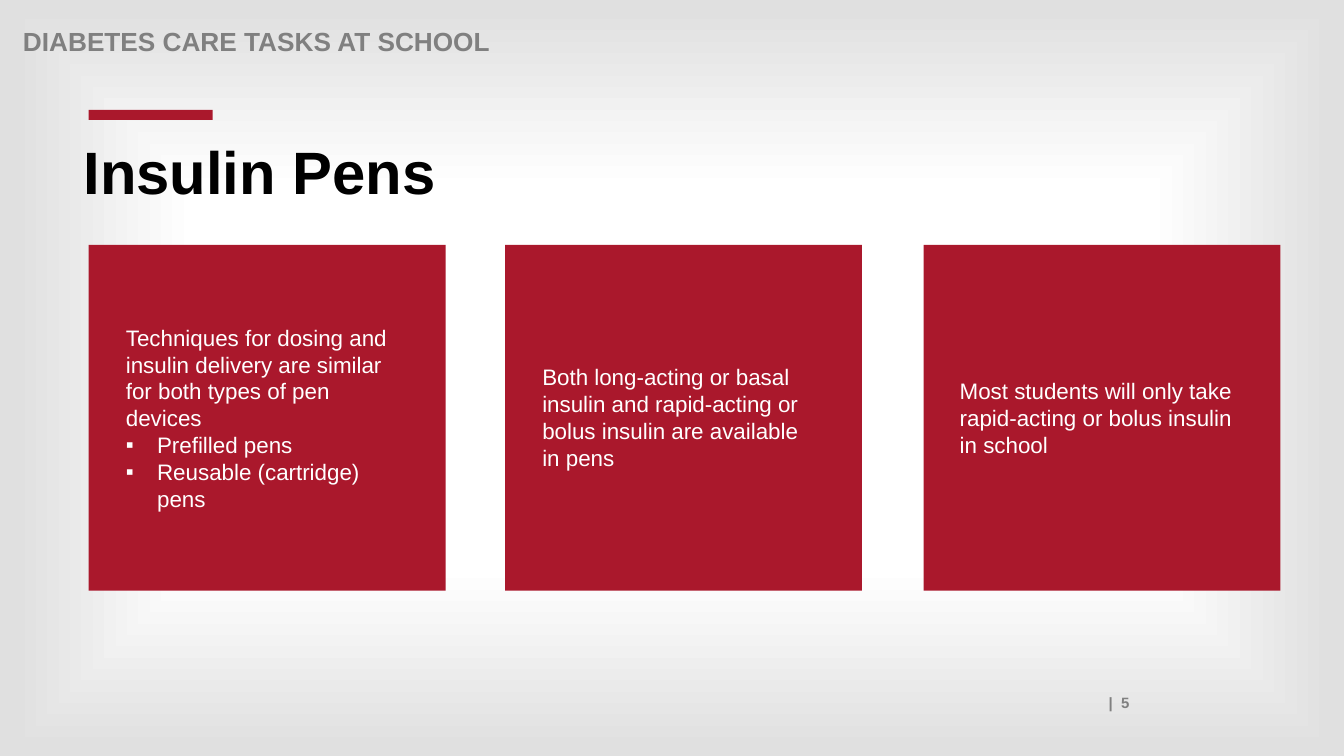
from lxml import etree
from pptx import Presentation
from pptx.dml.color import RGBColor
from pptx.enum.shapes import MSO_SHAPE as Shape
from pptx.enum.text import MSO_ANCHOR as Anchor, MSO_AUTO_SIZE as AutoSize, PP_ALIGN as Align
from pptx.oxml import parse_xml
from pptx.oxml.ns import nsdecls, qn
from pptx.util import Inches, Pt

RED = "AA182C"
GREY = "808080"
WHITE = "FFFFFF"
BLACK = "000000"

CARD_TOP, CARD_WIDTH, CARD_HEIGHT = 2.43, 3.54, 3.43

# Card left, text box (left, top, width, height), lines as (text, is bullet)
CARDS = [
    (0.88, (1.15, 3.15, 3.01, 1.99), [
        ("Techniques for dosing and insulin delivery are similar for both types of pen devices", False),
        ("Prefilled pens", True),
        ("Reusable (cartridge) pens", True),
    ]),
    (5.01, (5.28, 3.55, 2.95, 1.18), [
        ("Both long-acting or basal insulin and rapid-acting or bolus insulin are available in pens", False),
    ]),
    (9.16, (9.42, 3.69, 2.91, 0.91), [
        ("Most students will only take rapid-acting or bolus insulin in school", False),
    ]),
]


def color(value):
    return RGBColor.from_string(value)


def set_background(slide):
    stops = [(12, WHITE), (50, WHITE), (98, "E0E0E0")]
    stop_xml = "".join(
        f'<a:gs pos="{percent * 1000}"><a:srgbClr val="{value}"/></a:gs>'
        for percent, value in stops)
    background = parse_xml(
        f'<p:bg {nsdecls("p", "a")}><p:bgPr><a:gradFill rotWithShape="1">'
        f'<a:gsLst>{stop_xml}</a:gsLst><a:path path="shape">'
        '<a:fillToRect l="50000" t="50000" r="50000" b="50000"/></a:path>'
        '</a:gradFill><a:effectLst/></p:bgPr></p:bg>')
    slide.element.cSld.insert(0, background)


def add_rectangle(slide, left, top, width, height):
    shape = slide.shapes.add_shape(
        Shape.RECTANGLE, Inches(left), Inches(top), Inches(width), Inches(height))
    shape.shadow.inherit = False
    shape.fill.solid()
    shape.fill.fore_color.rgb = color(RED)
    shape.line.fill.background()


def add_run(paragraph, text, size, font_color, bold=False):
    run = paragraph.add_run()
    run.text = text
    run.font.name = "Arial"
    run.font.size = Pt(size)
    run.font.bold = bold
    run.font.color.rgb = color(font_color)


def set_bullet(paragraph):
    properties = paragraph._p.get_or_add_pPr()
    properties.set("marL", str(Inches(0.31)))
    properties.set("indent", str(-Inches(0.31)))
    etree.SubElement(properties, qn("a:buFont"), typeface="Arial")
    etree.SubElement(properties, qn("a:buChar"), char="▪")


def prepare_frame(shape, anchor=Anchor.TOP):
    frame = shape.text_frame
    frame.word_wrap = True
    frame.auto_size = AutoSize.NONE
    frame.vertical_anchor = anchor
    return frame


def add_text_box(slide, left, top, width, height, anchor=Anchor.TOP):
    box = slide.shapes.add_textbox(Inches(left), Inches(top), Inches(width), Inches(height))
    return prepare_frame(box, anchor)


def write_heading(paragraph, text, size, font_color):
    paragraph.alignment = Align.LEFT
    paragraph.line_spacing = 0.9
    paragraph.space_before = Pt(13.3)
    add_run(paragraph, text, size, font_color, bold=True)


def set_title(slide, text):
    title = slide.shapes.title
    title.left, title.top = Inches(0.73), Inches(1.37)
    title.width, title.height = Inches(11.03), Inches(1.3)
    write_heading(prepare_frame(title).paragraphs[0], text, 42.7, BLACK)


def add_card_text(slide, box, lines):
    frame = add_text_box(slide, *box, anchor=Anchor.MIDDLE)
    for index, (text, is_bullet) in enumerate(lines):
        paragraph = frame.add_paragraph() if index else frame.paragraphs[0]
        if is_bullet:
            set_bullet(paragraph)
        add_run(paragraph, text, 16, WHITE)


def main():
    presentation = Presentation()
    presentation.slide_width = Inches(13.33)
    presentation.slide_height = Inches(7.5)
    slide = presentation.slides.add_slide(presentation.slide_layouts[5])
    set_background(slide)

    # Page number and section header
    number = add_text_box(slide, 1.21, 6.83, 10.09, 0.28).paragraphs[0]
    number.alignment = Align.RIGHT
    add_run(number, "|  5", 10.7, GREY, bold=True)
    header = add_text_box(slide, 0.13, 0.24, 11, 0.28).paragraphs[0]
    write_heading(header, "DIABETES CARE TASKS AT SCHOOL", 18.7, GREY)

    # Title with its accent bar
    add_rectangle(slide, 0.88, 1.09, 1.23, 0.1)
    set_title(slide, "Insulin Pens")

    # Three cards
    for card_left, text_box, lines in CARDS:
        add_rectangle(slide, card_left, CARD_TOP, CARD_WIDTH, CARD_HEIGHT)
        add_card_text(slide, text_box, lines)

    presentation.save("out.pptx")


if __name__ == "__main__":
    main()
